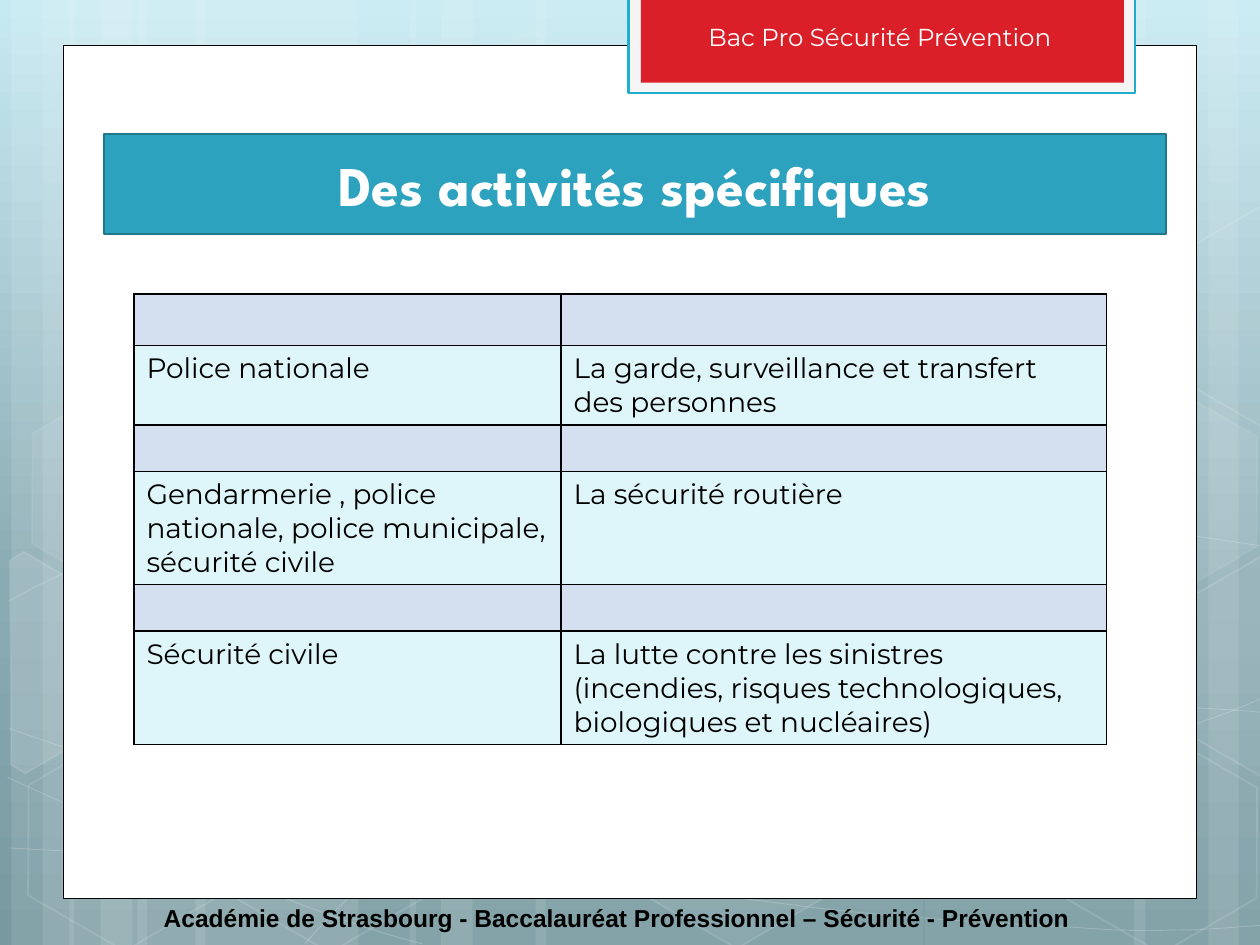
from lxml.etree import SubElement
from copy import deepcopy

from pptx import Presentation
from pptx.dml.color import RGBColor
from pptx.enum.shapes import MSO_SHAPE
from pptx.enum.text import MSO_ANCHOR, PP_ALIGN
from pptx.oxml.ns import qn
from pptx.util import Cm, Pt


class Theme:
    sky = [(0, "C7EAF2"), (0.62, "8BABB3"), (1, "7799A0")]
    white, black = "FFFFFF", "000000"
    tab_frame, tab_edge, tab = "F5F5F5", "1FAECD", "DA1F28"
    title, title_edge = "2DA2BF", "21788D"
    spacer_row, content_row = "D4DFEF", "DEF5FA"
    body_font, title_font, footer_font = "Montserrat", "League Spartan", "Arial"
    small, body, heading = Pt(14), Pt(16), Pt(32)


def paint(shape, fill=None, edge=None, width=1, fill_alpha=100, edge_alpha=100):
    """Set fill and outline; alphas are opacities in percent."""
    shape.shadow.inherit = False
    for part, color, alpha in ((shape.fill, fill, fill_alpha),
                               (shape.line.fill, edge, edge_alpha)):
        if color is None:
            part.background()
            continue
        part.solid()
        part.fore_color.rgb = RGBColor.from_string(color)
        if alpha < 100:
            owner = shape._element.spPr
            if part is not shape.fill:
                owner = owner.find(qn("a:ln"))
            solid = owner.find(qn("a:solidFill"))
            SubElement(solid[0], qn("a:alpha"), val=str(alpha * 1000))
    if edge:
        shape.line.width = Pt(width)


def write(frame, text, font, size, color, bold=False, align=PP_ALIGN.LEFT):
    frame.text = text
    paragraph = frame.paragraphs[0]
    paragraph.alignment = align
    paragraph.font.name = font
    paragraph.font.size = size
    paragraph.font.bold = bold
    paragraph.font.color.rgb = RGBColor.from_string(color)


prs = Presentation()
prs.slide_width, prs.slide_height = Cm(25.4), Cm(19.05)
slide = prs.slides.add_slide(prs.slide_layouts[6])
shapes = slide.shapes

# Background gradient, top to bottom
sky = slide.background.fill
sky.gradient()
sky.gradient_angle = 270
stop_list = next(slide._element.iter(qn("a:gsLst")))
stop_list.append(deepcopy(stop_list[-1]))
for stop, (position, color) in zip(sky.gradient_stops, Theme.sky):
    stop.position = position
    stop.color.rgb = RGBColor.from_string(color)

# Full-height translucent bands: left, width, rotation
bands = [(2.77, 4.45, 0), (0.23, 1.27, 0), (0.86, 2.11, 0), (3.94, 4.45, 0),
         (1.4, 1.27, 0), (2.03, 2.11, 0), (18.64, 4.45, 180), (24.36, 1.27, 180),
         (22.86, 2.11, 180), (10.8, 7.82, 0), (8.26, 1.27, 0), (8.89, 2.11, 0)]
for left, width, rotation in bands:
    band = shapes.add_shape(MSO_SHAPE.RECTANGLE, Cm(left), 0, Cm(width), prs.slide_height)
    band.rotation = rotation
    paint(band, Theme.white, fill_alpha=10)

# Free outlines use a grid of 1000 units across the slide
UNIT = Cm(0.0254)

# Bezier waves: a start point, then two controls and an end point per piece
waves = [
    [(7, 673), (61, 676), (115, 679), (190, 678), (265, 677), (358, 675), (458, 665),
     (558, 655), (700, 636), (792, 617), (883, 598), (977, 568), (1007, 551)],
    [(7, 477), (36, 461), (65, 446), (121, 431), (178, 416), (259, 394), (347, 387),
     (436, 380), (544, 379), (654, 387), (764, 395), (947, 426), (1007, 434)],
    [(6, 617), (127, 672), (247, 727), (335, 749)],
    [(7, 578), (38, 589), (70, 600), (128, 616), (186, 631), (273, 656), (357, 673),
     (440, 690), (545, 708), (628, 718), (711, 729), (800, 733), (853, 736),
     (906, 740), (919, 738), (945, 738), (971, 737), (989, 735), (1007, 734)],
    [(242, 749), (260, 729), (278, 709), (302, 691), (326, 672), (360, 653), (388, 639),
     (416, 625), (433, 619), (469, 609), (506, 599), (573, 585), (608, 578),
     (644, 571), (649, 571), (680, 569), (711, 566), (760, 563), (794, 562),
     (829, 561), (886, 562), (886, 562), (908, 562), (931, 562), (953, 562),
     (971, 563), (988, 564), (997, 565), (1006, 566), (1003, 565), (1006, 566)],
]
for wave in waves:
    outline = shapes.build_freeform(*wave[0], scale=UNIT)
    outline.add_line_segments(wave[1:], close=False)
    curve = outline.convert_to_shape()
    steps = list(curve._element.iter(qn("a:lnTo")))
    for i in range(0, len(steps), 3):
        piece = SubElement(steps[i].getparent(), qn("a:cubicBezTo"))
        for step in steps[i:i + 3]:
            piece.append(step[0])
            step.getparent().remove(step)
    paint(curve, edge=Theme.white, width=0.5, edge_alpha=20)

# Hexagons: left, top, fill opacity, edge opacity
hexagons = [(8.48, 0.91, 4, 8), (12.62, 14.96, 6, 12), (0.28, 15.01, 0, 12),
            (0.36, 7.92, 7, 8), (4.42, 15.04, 0, 12), (19.13, 11.51, 10, 12),
            (21.18, 15.06, 0, 12), (21.18, 7.98, 7, 8)]
for left, top, fill_alpha, edge_alpha in hexagons:
    hexagon = shapes.add_shape(MSO_SHAPE.HEXAGON, Cm(left), Cm(top), Cm(4.45), Cm(3.86))
    hexagon.adjustments[0] = 0.285
    hexagon.adjustments[1] = 1.155
    hexagon.rotation = 30
    paint(hexagon, Theme.white if fill_alpha else None, Theme.white,
          fill_alpha=fill_alpha, edge_alpha=edge_alpha)

# Hexagons cut by the slide edges
cut_hexagons = [
    (10, [(8, 445), (19, 438), (96, 483), (95, 570), (20, 614), (9, 607)]),
    (4, [(926, 485), (1002, 441), (1009, 446), (1009, 613), (1002, 617), (926, 573)]),
    (0, [(926, 207), (1002, 163), (1010, 168), (1009, 335), (1002, 339), (926, 295)]),
]
for fill_alpha, corners in cut_hexagons:
    outline = shapes.build_freeform(*corners[0], scale=UNIT)
    outline.add_line_segments(corners[1:], close=True)
    paint(outline.convert_to_shape(), Theme.white if fill_alpha else None, Theme.white,
          fill_alpha=fill_alpha, edge_alpha=12)

# White page and red tab
panels = [
    (1.27, 0.91, 22.86, 17.2, Theme.white, Theme.black, 0.5),
    (12.67, -0.06, 10.22, 1.94, Theme.tab_frame, Theme.tab_edge, 1.25),
    (12.92, -0.06, 9.74, 1.73, Theme.tab, None, 0),
]
for left, top, width, height, fill, edge, edge_width in panels:
    panel = shapes.add_shape(MSO_SHAPE.RECTANGLE, Cm(left), Cm(top), Cm(width), Cm(height))
    paint(panel, fill, edge, edge_width)

footer = shapes.add_textbox(Cm(3.05), Cm(18.07), Cm(18.85), Cm(0.86)).text_frame
footer.word_wrap = False
write(footer, "Académie de Strasbourg - Baccalauréat Professionnel – Sécurité - Prévention",
      Theme.footer_font, Theme.small, Theme.black, bold=True)

tab_label = shapes.add_textbox(Cm(13.04), Cm(0.31), Cm(9.4), Cm(0.86)).text_frame
tab_label.word_wrap = True
write(tab_label, "Bac Pro Sécurité Prévention", Theme.body_font, Theme.small, Theme.white,
      align=PP_ALIGN.CENTER)

title = shapes.add_shape(MSO_SHAPE.FLOWCHART_PROCESS, Cm(2.1), Cm(2.71), Cm(21.41), Cm(2.01))
paint(title, Theme.title, Theme.title_edge, 1.25)
title.text_frame.vertical_anchor = MSO_ANCHOR.MIDDLE
write(title.text_frame, "Des activités spécifiques", Theme.title_font, Theme.heading,
      Theme.white, bold=True, align=PP_ALIGN.CENTER)

# Activities table: an empty spacer row comes before each content row
activities = [
    ("Police nationale", "La garde, surveillance et transfert des personnes"),
    ("Gendarmerie , police nationale, police municipale, sécurité civile",
     "La sécurité routière"),
    ("Sécurité civile",
     "La lutte contre les sinistres (incendies, risques technologiques, "
     "biologiques et nucléaires)"),
]
row_heights = [1.03, 1.61, 0.93, 2.28, 0.93, 2.29]
table = shapes.add_table(len(row_heights), 2, Cm(2.7), Cm(5.93), Cm(19.61),
                         Cm(sum(row_heights))).table
for column, width in zip(table.columns, (8.61, 11)):
    column.width = Cm(width)
for r, height in enumerate(row_heights):
    table.rows[r].height = Cm(height)
    has_text = r % 2 == 1
    for c in range(2):
        cell = table.cell(r, c)
        if has_text:
            write(cell.text_frame, activities[r // 2][c], Theme.body_font, Theme.body, Theme.black)
        else:
            cell.margin_top = cell.margin_bottom = 0
        properties = cell._tc.get_or_add_tcPr()
        for side in ("lnL", "lnR", "lnT", "lnB"):
            border = SubElement(properties, qn(f"a:{side}"), w=str(Pt(1)))
            SubElement(SubElement(border, qn("a:solidFill")), qn("a:srgbClr"), val=Theme.black)
        cell.fill.solid()
        cell.fill.fore_color.rgb = RGBColor.from_string(
            Theme.content_row if has_text else Theme.spacer_row)

prs.save("out.pptx")
